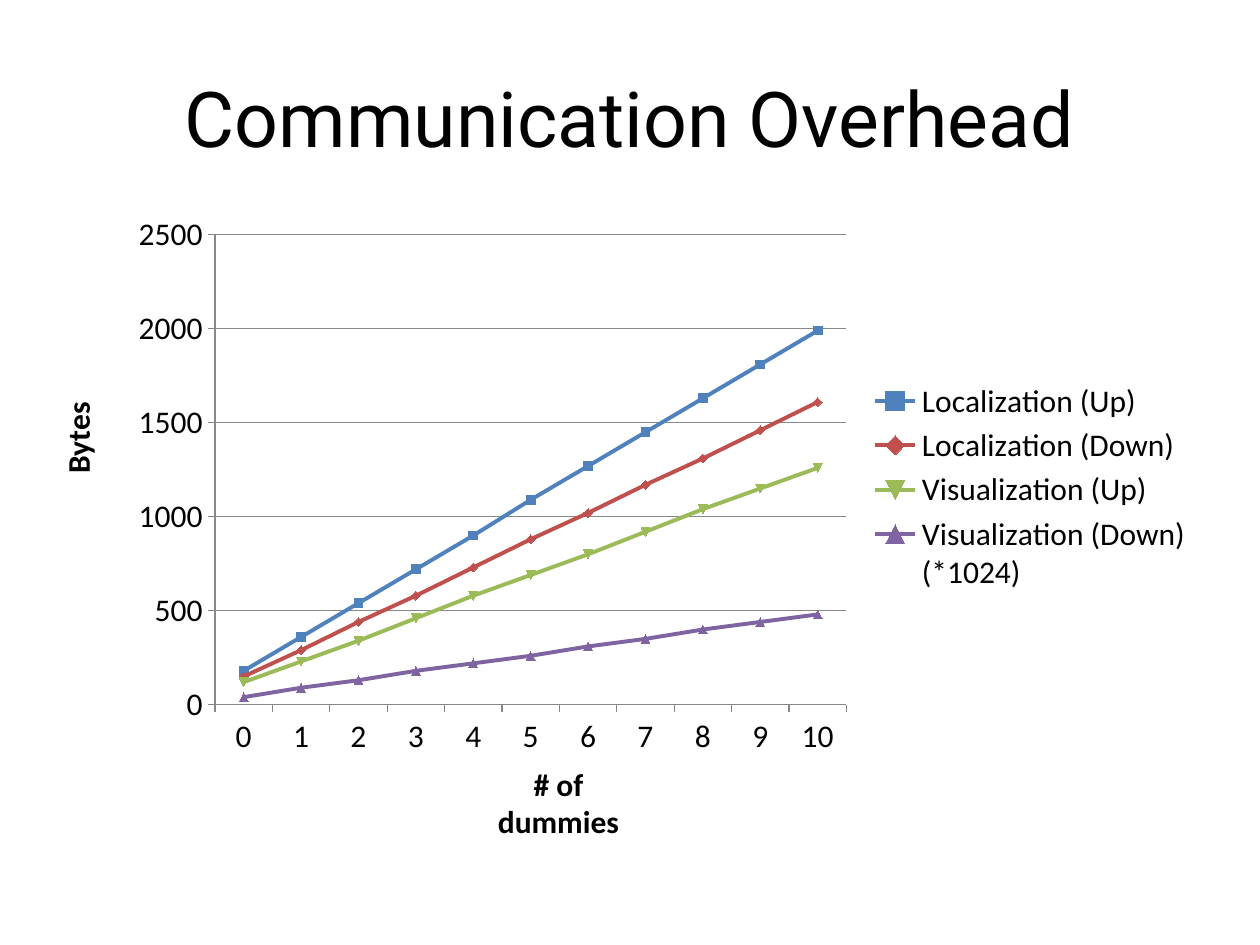
from dataclasses import dataclass

from pptx import Presentation, oxml
from pptx import util as u
from pptx.chart.data import CategoryChartData
from pptx.dml.color import RGBColor
from pptx.enum import chart as charts, text
from pptx.oxml import ns


@dataclass(frozen=True)
class Theme:
    """Colours, fonts and sizes of the slide."""

    ink: str = "000000"
    rule: str = "878787"
    title_font: str = "Roboto"
    body_font: str = "Calibri"
    title_size: int = 44
    body_size: int = 18
    line_width: float = 2.25
    marker_size: int = 5


@dataclass(frozen=True)
class Box:
    """A rectangle in centimetres."""

    left: float
    top: float
    width: float
    height: float

    def lengths(self):
        """Return the four sides as lengths."""
        return [u.Cm(side) for side in (self.left, self.top, self.width, self.height)]


THEME = Theme()
SERIES = [
    ("Localization (Up)", "4F81BD",
     [180, 360, 540, 720, 900, 1090, 1270, 1450, 1630, 1810, 1990]),
    ("Localization (Down)", "C0504D",
     [150, 290, 440, 580, 730, 880, 1020, 1170, 1310, 1460, 1610]),
    ("Visualization (Up)", "9BBB59",
     [120, 230, 340, 460, 580, 690, 800, 920, 1040, 1150, 1260]),
    ("Visualization (Down) (*1024)", "8064A2",
     [40, 90, 130, 180, 220, 260, 310, 350, 400, 440, 480]),
]


def colour(code):
    """Turn a hex code into a colour."""
    return RGBColor.from_string(code)


def style_font(font, name, size, bold=False):
    """Apply a face, size and weight in the ink colour."""
    font.name, font.size, font.bold = name, u.Pt(size), bold
    font.color.rgb = colour(THEME.ink)


def place_title(page, box, wording):
    """Move and format the title placeholder."""
    title = page.shapes.title
    title.left, title.top, title.width, title.height = box.lengths()
    frame = title.text_frame
    frame.text = wording
    frame.vertical_anchor = text.MSO_ANCHOR.MIDDLE
    para = frame.paragraphs[0]
    para.alignment = text.PP_ALIGN.CENTER
    style_font(para.runs[0].font, THEME.title_font, THEME.title_size)


def add_axis_label(page, box, wording, rotation=0):
    """Add a bold centred label beside an axis."""
    label = page.shapes.add_textbox(*box.lengths())
    label.rotation = rotation
    frame = label.text_frame
    frame.text = wording
    frame.word_wrap = False
    para = frame.paragraphs[0]
    para.alignment = text.PP_ALIGN.CENTER
    style_font(para.runs[0].font, THEME.body_font, THEME.body_size, bold=True)


def fix_plot_area(chart, left, top, width, height):
    """Pin the inner plot area to fractions of the chart frame."""
    area = chart._chartSpace.chart.plotArea
    for layout in area.findall(ns.qn("c:layout")):
        area.remove(layout)
    sides = "".join(
        f'<c:{tag} val="{value}"/>'
        for tag, value in (("x", left), ("y", top), ("w", width), ("h", height))
    )
    area.insert(0, oxml.parse_xml(
        f'<c:layout {ns.nsdecls("c")}><c:manualLayout>'
        '<c:layoutTarget val="inner"/><c:xMode val="edge"/><c:yMode val="edge"/>'
        f"{sides}</c:manualLayout></c:layout>"
    ))


def style_axes(chart):
    """Draw both axes and the value gridlines as thin rules."""
    value_axis = chart.value_axis
    value_axis.minimum_scale, value_axis.maximum_scale = 0, 2500
    value_axis.major_unit = 500
    value_axis.has_major_gridlines = True
    lines = [value_axis.major_gridlines.format.line]
    for axis in (chart.category_axis, value_axis):
        axis.major_tick_mark = charts.XL_TICK_MARK.OUTSIDE
        lines.append(axis.format.line)
    for line in lines:
        line.color.rgb = colour(THEME.rule)
        line.width = u.Pt(0.75)


def add_overhead_chart(page, box):
    """Add the line chart of bytes against dummies."""
    table = CategoryChartData()
    table.categories = [str(count) for count in range(11)]
    for name, _, values in SERIES:
        table.add_series(name, values)
    chart = page.shapes.add_chart(
        charts.XL_CHART_TYPE.LINE_MARKERS, *box.lengths(), table
    ).chart
    style_font(chart.font, THEME.body_font, THEME.body_size)
    chart.has_title = False
    chart.has_legend = True
    chart.legend.position = charts.XL_LEGEND_POSITION.RIGHT
    chart.legend.include_in_layout = False
    plot = chart.plots[0]
    plot.vary_by_categories = False
    for series, (_, code, _) in zip(plot.series, SERIES):
        series.smooth = False
        series.format.line.color.rgb = colour(code)
        series.format.line.width = u.Pt(THEME.line_width)
        series.marker.size = THEME.marker_size
        series.marker.format.fill.solid()
        series.marker.format.fill.fore_color.rgb = colour(code)
        series.marker.format.line.color.rgb = colour(code)
    style_axes(chart)
    fix_plot_area(chart, 0.09, 0.05, 0.58, 0.84)


def main():
    """Build and save the slide."""
    deck = Presentation()
    deck.slide_width, deck.slide_height = u.Cm(25.4), u.Cm(19.05)
    page = deck.slides.add_slide(deck.slide_layouts[5])
    add_overhead_chart(page, Box(2.36, 4.17, 21.95, 11.28))
    place_title(page, Box(1.27, 0.76, 22.86, 3.18), "Communication Overhead")
    add_axis_label(page, Box(-0.61, 7.72, 5.54, 2.21), "Bytes", rotation=270)
    add_axis_label(page, Box(9.42, 15.29, 3.68, 1.07), "# of dummies")
    deck.save("out.pptx")


if __name__ == "__main__":
    main()
